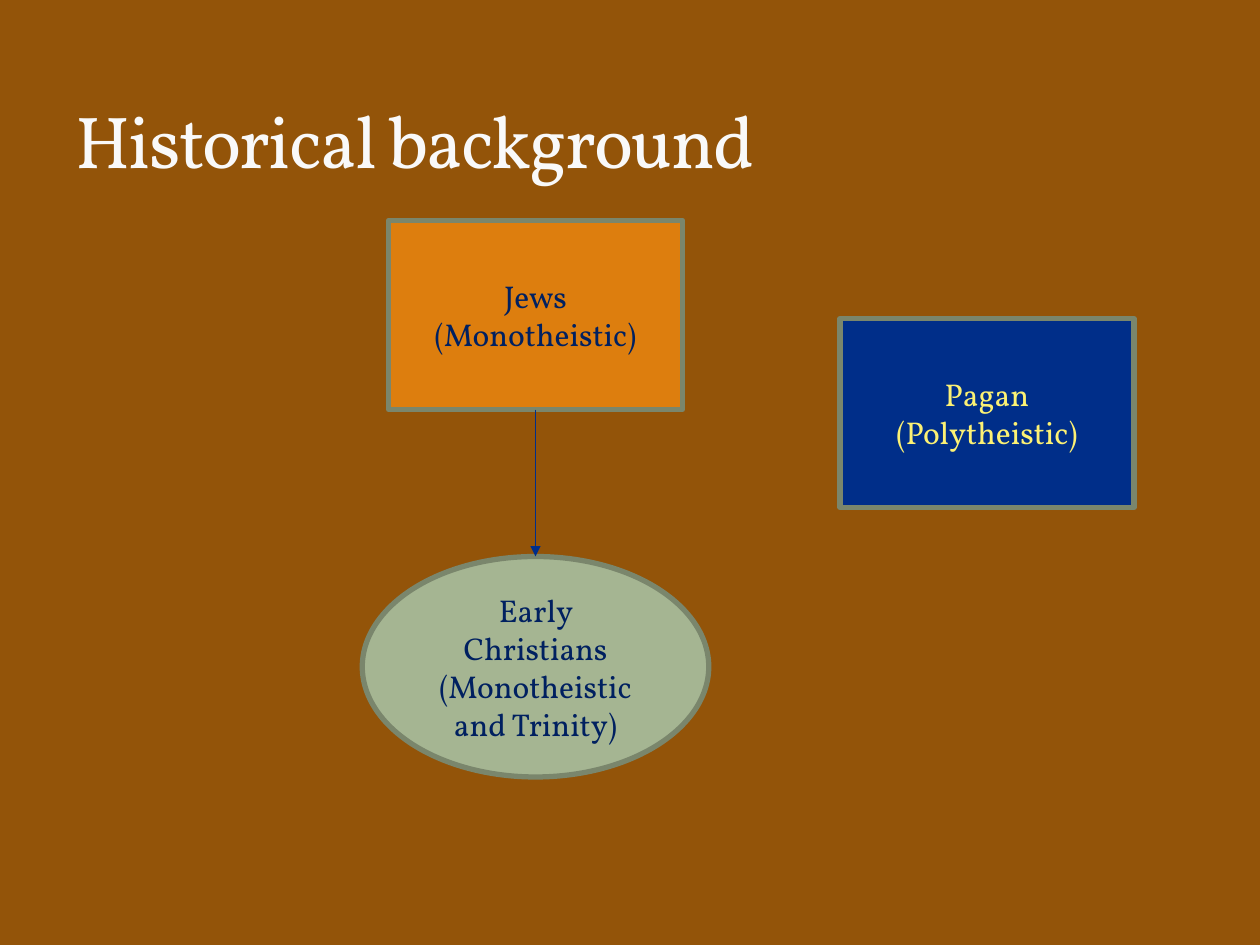
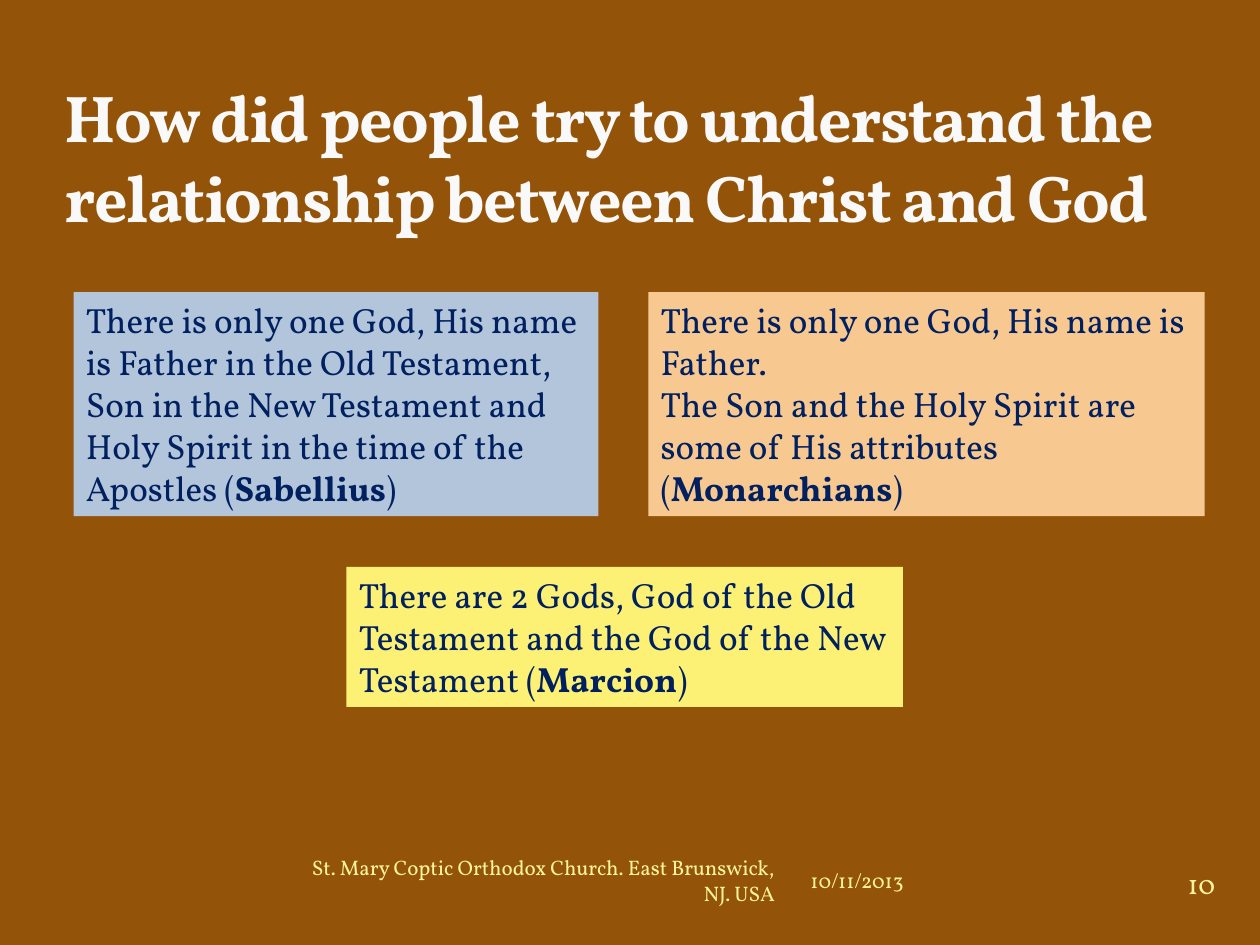
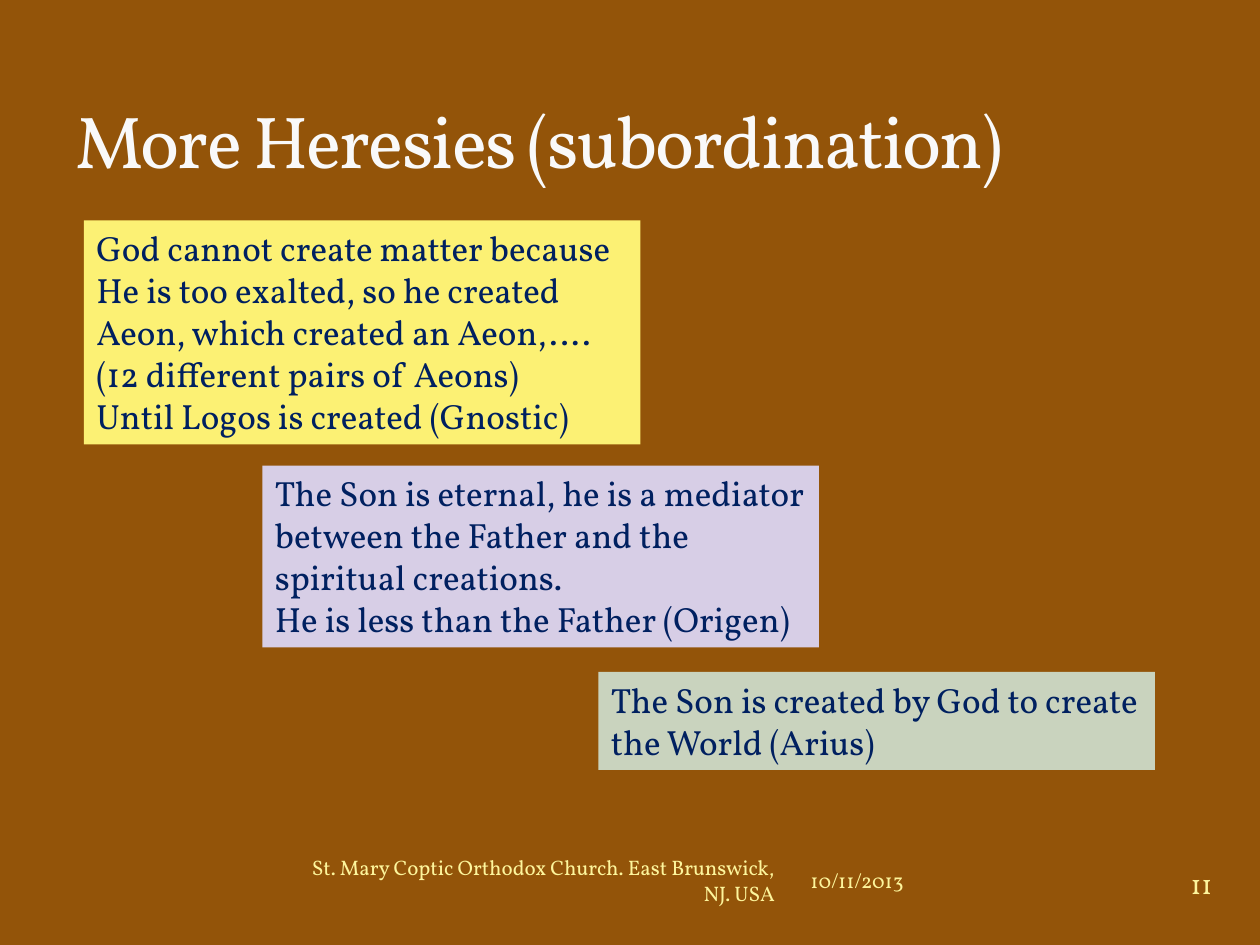
from pptx import Presentation
from pptx.dml.color import RGBColor
from pptx.enum import shapes, text
from pptx.oxml import ns
from pptx.util import Pt
from lxml import etree

FONT = "Vollkorn"
BROWN = RGBColor(0x93, 0x54, 0x09)
WHITE = RGBColor(0xF9, 0xF9, 0xF9)
NAVY = RGBColor(0x00, 0x20, 0x60)
BLUE = RGBColor(0x00, 0x2E, 0x89)
ORANGE = RGBColor(0xDD, 0x7E, 0x0E)
SAGE = RGBColor(0xA5, 0xB5, 0x92)
MOSS = RGBColor(0x7A, 0x86, 0x6C)
YELLOW = RGBColor(0xFC, 0xF1, 0x74)
CREAM = RGBColor(0xFD, 0xF5, 0x9C)
PALE_BLUE = RGBColor(0xB3, 0xC5, 0xDA)
PEACH = RGBColor(0xF8, 0xC8, 0x91)
LILAC = RGBColor(0xD7, 0xCE, 0xE6)
PALE_SAGE = RGBColor(0xC9, 0xD3, 0xBE)

LEFT, CENTER, RIGHT = text.PP_ALIGN.LEFT, text.PP_ALIGN.CENTER, text.PP_ALIGN.RIGHT
TOP, MIDDLE, BOTTOM = text.MSO_ANCHOR.TOP, text.MSO_ANCHOR.MIDDLE, text.MSO_ANCHOR.BOTTOM
RECTANGLE, OVAL = shapes.MSO_SHAPE.RECTANGLE, shapes.MSO_SHAPE.OVAL

TITLE_BOX = (36, 12, 648, 96)
NOTE_WIDTH = 318
FOOTER = "St. Mary Coptic Orthodox Church. East Brunswick, NJ. USA"
DATE = "10/11/2013"


def write(shape, words, size=20, color=NAVY, align=LEFT, anchor=TOP,
          bold=False, tracking=0, inset=None):
    frame = shape.text_frame
    frame.word_wrap = True
    frame.vertical_anchor = anchor
    if inset is not None:
        frame.margin_left = frame.margin_right = Pt(inset)
        frame.margin_top = frame.margin_bottom = Pt(inset)
    for number, line in enumerate(words.split("\n")):
        para = frame.add_paragraph() if number else frame.paragraphs[0]
        para.alignment = align
        for position, part in enumerate(line.split("*")):
            for row, piece in enumerate(part.split("\v")):
                if row:
                    para.add_line_break()
                span = para.add_run()
                span.text = piece
                span.font.name = FONT
                span.font.size = Pt(size)
                span.font.color.rgb = color
                span.font.bold = bold or position % 2 == 1
                if tracking:
                    span.font._element.set("spc", str(tracking * 100))


def add_text(page, box, words, **style):
    write(page.shapes.add_textbox(*map(Pt, box)), words, **style)


def add_figure(page, kind, box, fill, border=None):
    figure = page.shapes.add_shape(kind, *map(Pt, box))
    figure.shadow.inherit = False
    figure.fill.solid()
    figure.fill.fore_color.rgb = fill
    if border:
        figure.line.color.rgb = border
        figure.line.width = Pt(3)
    else:
        figure.line.fill.background()
    return figure


def add_group(page, kind, box, fill, words, color=NAVY):
    group = add_figure(page, kind, box, fill, MOSS)
    write(group, words, size=18, color=color, align=CENTER, anchor=MIDDLE)
    return group


def add_note(page, left, top, lines, fill, words, width=NOTE_WIDTH):
    note = add_figure(page, RECTANGLE, (left, top, width, 24 * lines + 8), fill)
    write(note, words)
    note.text_frame.auto_size = text.MSO_AUTO_SIZE.SHAPE_TO_FIT_TEXT


def add_arrow(page, source, target):
    arrow = page.shapes.add_connector(shapes.MSO_CONNECTOR.STRAIGHT, 0, 0, 0, 0)
    arrow.begin_connect(source, 2)
    arrow.end_connect(target, 0)
    arrow.line.color.rgb = BLUE
    arrow.line.width = Pt(1)
    etree.SubElement(arrow.line._get_or_add_ln(), ns.qn("a:tailEnd"), type="triangle")
    etree.SubElement(arrow._element.spPr, ns.qn("a:effectLst"))


def add_footer(page, number, top=488):
    add_text(page, (456, top, 204, 30), DATE, size=12, color=CREAM, anchor=MIDDLE)
    add_text(page, (168, top, 282, 30), FOOTER, size=12, color=CREAM,
             align=RIGHT, anchor=MIDDLE)
    add_text(page, (662.5, top - 1, 48, 36), str(number), size=16, color=CREAM,
             align=CENTER, anchor=MIDDLE, inset=0)


def add_page(deck, title, box=TITLE_BOX, size=42, bold=False, number=None):
    page = deck.slides.add_slide(deck.slide_layouts[6])
    page.background.fill.solid()
    page.background.fill.fore_color.rgb = BROWN
    if number:
        add_footer(page, number)
    add_text(page, box, title, size=size, color=WHITE, anchor=BOTTOM,
             bold=bold, tracking=-1)
    return page


def build_background(deck):
    page = add_page(deck, "Historical background")
    christians = add_group(page, OVAL, (207, 318, 198, 126), SAGE,
                           "Early Christians\v(Monotheistic and Trinity)")
    jews = add_group(page, RECTANGLE, (222, 126, 168, 108), ORANGE,
                     "Jews\n(Monotheistic)")
    add_group(page, RECTANGLE, (480, 182, 168, 108), BLUE,
              "Pagan\n(Polytheistic)", color=YELLOW)
    add_arrow(page, jews, christians)


def build_views(deck):
    page = add_page(
        deck, "How did people try to understand the relationship between Christ and God",
        box=(30, 42, 648, 96), size=37.8, bold=True, number=10)
    add_note(page, 42, 167, 5, PALE_BLUE,
             "There is only one God, His name is Father in the Old Testament, Son in the "
             "New Testament and Holy Spirit in the time of the Apostles (*Sabellius*)",
             width=300)
    add_note(page, 370.5, 167, 5, PEACH,
             "There is only one God, His name is Father.\n"
             "The Son and the Holy Spirit are some of His attributes (*Monarchians*)")
    add_note(page, 198, 324, 3, YELLOW,
             "There are 2 Gods, God of the Old Testament and the God of the New "
             "Testament (*Marcion*)")


def build_heresies(deck):
    page = add_page(deck, "More Heresies (subordination)", number=11)
    add_note(page, 48, 126, 5, YELLOW,
             "God cannot create matter because He is too exalted, so he created Aeon, "
             "which created an Aeon,…. (12 different pairs of Aeons)\n"
             "Until Logos is created (Gnostic)")
    add_note(page, 150, 266, 4, LILAC,
             "The Son is eternal, he is a mediator between the Father and the spiritual "
             "creations.\nHe is less than the Father (Origen)")
    add_note(page, 342, 384, 2, PALE_SAGE,
             "The Son is created by God to create the World (Arius)")


def main():
    deck = Presentation()
    deck.slide_width, deck.slide_height = Pt(720), Pt(540)
    build_background(deck)
    build_views(deck)
    build_heresies(deck)
    deck.save("out.pptx")


if __name__ == "__main__":
    main()
